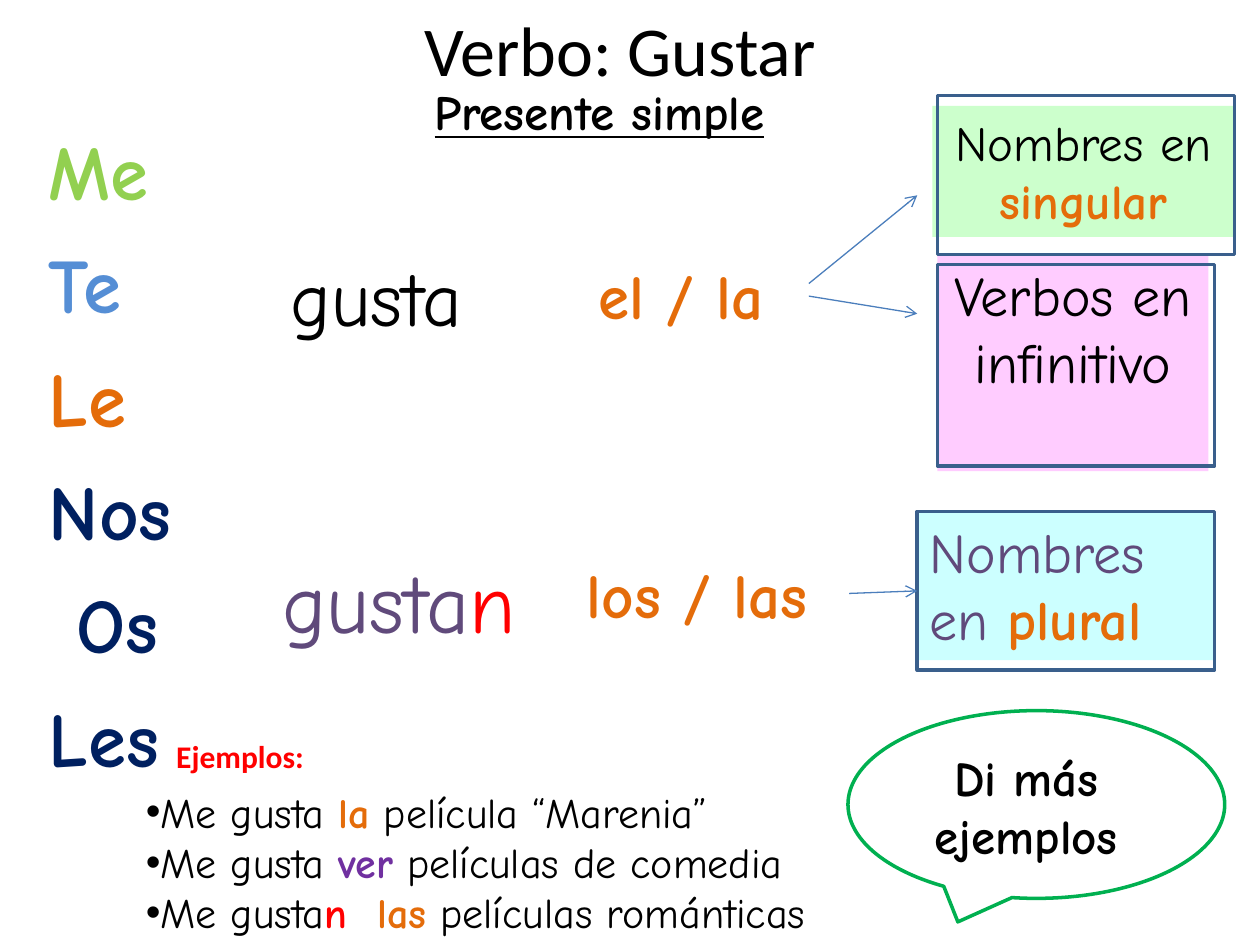
from dataclasses import dataclass

from lxml.etree import SubElement
from pptx import Presentation
from pptx.dml.color import RGBColor as RGB
from pptx.enum.shapes import MSO_CONNECTOR as CONNECTOR, MSO_SHAPE as SHAPE
from pptx.enum.text import MSO_ANCHOR as ANCHOR, MSO_AUTO_SIZE as AUTO_SIZE, PP_ALIGN as ALIGN
from pptx.oxml.ns import qn
from pptx.util import Inches, Pt


@dataclass(frozen=True)
class Theme:
    heading_font: str = "Calibri"
    body_font: str = "Comic Neue"
    black: str = "000000"
    red: str = "FF0000"
    orange: str = "E46C0A"
    violet: str = "604A7B"
    purple: str = "7030A0"
    lime: str = "92D050"
    sky: str = "558ED5"
    navy: str = "002060"
    mint: str = "CCFFCC"
    pink: str = "FFCCFF"
    aqua: str = "CCFFFF"
    frame: str = "3A5F8C"
    arrow: str = "4B7EBC"
    bubble: str = "00B050"
    title: int = 40
    stem: int = 48
    verb: int = 44
    article: int = 36
    noun: int = 32
    subtitle: int = 28
    example: int = 24
    label: int = 18
    spacer: int = 72


class SlideBuilder:
    """Draws text, boxes and arrows on one slide in a shared theme."""

    def __init__(self, slide, theme):
        self.slide = slide
        self.theme = theme

    def fill_text(self, shape, paragraphs, size, wrap=True, bullet=None, font=None, **layout):
        frame = shape.text_frame
        settings = {"word_wrap": wrap, "auto_size": AUTO_SIZE.SHAPE_TO_FIT_TEXT,
                    "vertical_anchor": ANCHOR.TOP}
        for name, value in settings.items():
            setattr(frame, name, value)
        for index, runs in enumerate(paragraphs):
            paragraph = frame.add_paragraph() if index else frame.paragraphs[0]
            for name, value in ({"alignment": ALIGN.LEFT} | layout).items():
                setattr(paragraph, name, value)
            if bullet:
                properties = paragraph._p.get_or_add_pPr()
                properties.set("marL", "0")
                properties.set("indent", "0")
                SubElement(properties, qn("a:buFont"), typeface="Arial")
                SubElement(properties, qn("a:buChar"), char=bullet)
            for text, color, *changes in runs:
                run = paragraph.add_run()
                run.text = text
                run.font.color.rgb = RGB.from_string(color)
                values = {"name": font or self.theme.body_font, "size": Pt(size), "bold": False}
                for change in changes:
                    values |= change
                for name, value in values.items():
                    setattr(run.font, name, value)

    def text(self, box, paragraphs, size, **options):
        shape = self.slide.shapes.add_textbox(*map(Inches, box))
        self.fill_text(shape, paragraphs, size, **options)

    def panel(self, box, color, paragraphs, size, **options):
        shape = self.slide.shapes.add_shape(SHAPE.RECTANGLE, *map(Inches, box))
        shape.shadow.inherit = False
        shape.fill.solid()
        shape.fill.fore_color.rgb = RGB.from_string(color)
        shape.line.fill.background()
        self.fill_text(shape, paragraphs, size, **options)

    def outline(self, box, color, kind=SHAPE.RECTANGLE):
        shape = self.slide.shapes.add_shape(kind, *map(Inches, box))
        shape.shadow.inherit = False
        shape.fill.background()
        shape.line.color.rgb = RGB.from_string(color)
        shape.line.width = Pt(2)
        return shape

    def arrow(self, start, end, target=None):
        connector = self.slide.shapes.add_connector(
            CONNECTOR.STRAIGHT, *map(Inches, (*start, *end)))
        if target is not None:
            connector.end_connect(target, 1)
        connector.line.color.rgb = RGB.from_string(self.theme.arrow)
        connector.line.width = Pt(0.75)
        properties = connector._element.spPr
        SubElement(properties.find(qn("a:ln")), qn("a:tailEnd"), type="arrow")
        SubElement(properties, qn("a:effectLst"))


def main():
    presentation = Presentation()
    presentation.slide_width, presentation.slide_height = Inches(10), Inches(7.5)
    theme = Theme()
    builder = SlideBuilder(presentation.slides.add_slide(presentation.slide_layouts[6]), theme)
    bold = {"bold": True}
    black, orange, violet = theme.black, theme.orange, theme.violet

    builder.text((3.27, 0, 3.47, 0.77), [[("Verbo: Gustar", black)]], theme.title,
                 wrap=False, font=theme.heading_font)
    builder.text((2.21, 1.93, 1.76, 0.84), [[("gusta", black)]], theme.verb, wrap=False)
    builder.text((2.14, 3.98, 2.55, 1.31),
                 [[("gusta", violet), ("n", theme.red), (" ", black, {"size": Pt(theme.spacer)})]],
                 theme.stem, wrap=False)
    builder.arrow((6.42, 2.25), (7.28, 1.55))
    builder.arrow((6.42, 2.35), (7.28, 2.49))

    builder.panel((7.4, 0.84, 2.4, 1.04), theme.mint,
                  [[("Nombres en ", black), ("singular", orange, bold)]],
                  theme.subtitle, alignment=ALIGN.CENTER)
    builder.panel((7.44, 2.02, 2.15, 1.72), theme.pink, [[("Verbos en infinitivo", black)]],
                  theme.noun, alignment=ALIGN.CENTER)
    builder.outline((7.44, 0.76, 2.36, 1.26), theme.frame)
    builder.outline((7.44, 2.1, 2.2, 1.6), theme.frame)
    builder.panel((7.28, 4.06, 2.36, 1.18), theme.aqua,
                  [[("Nombres en ", violet), ("plural", orange, bold)]], theme.noun)
    plural_frame = builder.outline((7.28, 4.06, 2.36, 1.26), theme.frame)

    builder.text((1.3, 5.8, 1.28, 0.4), [[("Ejemplos:", theme.red, bold)]], theme.label,
                 wrap=False, font=theme.heading_font)
    examples = [
        [("Me gusta ", black), ("la", orange, bold), (" película “Marenia”", black)],
        [("Me gusta ", black), ("ver", theme.purple, bold), (" películas de comedia", black)],
        [("Me gusta", black), ("n  ", theme.red, bold), ("las", orange, bold),
         (" películas románticas", black)],
    ]
    builder.text((1.06, 6.19, 5.79, 1.31), examples, theme.example, wrap=False, bullet="•")

    builder.outline((6.73, 5.64, 2.99, 1.49), theme.bubble, SHAPE.OVAL_CALLOUT)
    builder.text((7.2, 5.88, 1.89, 1.04), [[("Di más ejemplos", black, bold)]],
                 theme.subtitle, alignment=ALIGN.CENTER)
    builder.text((3.35, 0.6, 3.15, 0.57),
                 [[("Presente simple", black, bold, {"underline": True})]],
                 theme.subtitle, wrap=False)
    builder.text((4.65, 1.99, 1.78, 0.71), [[("el / la", orange, bold)]], theme.article)
    builder.arrow((6.74, 4.71), (7.28, 4.69), plural_frame)
    builder.text((4.56, 4.36, 2.28, 0.71), [[("los / las", orange, bold)]], theme.article)

    pronouns = {"Me": theme.lime, "Te": theme.sky, "Le": orange,
                "Nos": theme.navy, " Os": theme.navy, "Les": theme.navy}
    builder.text((0.29, 0.93, 1.33, 6.6),
                 [[(pronoun, color, bold)] for pronoun, color in pronouns.items()],
                 theme.verb, wrap=False, space_after=Pt(12))
    presentation.save("out.pptx")


if __name__ == "__main__":
    main()
